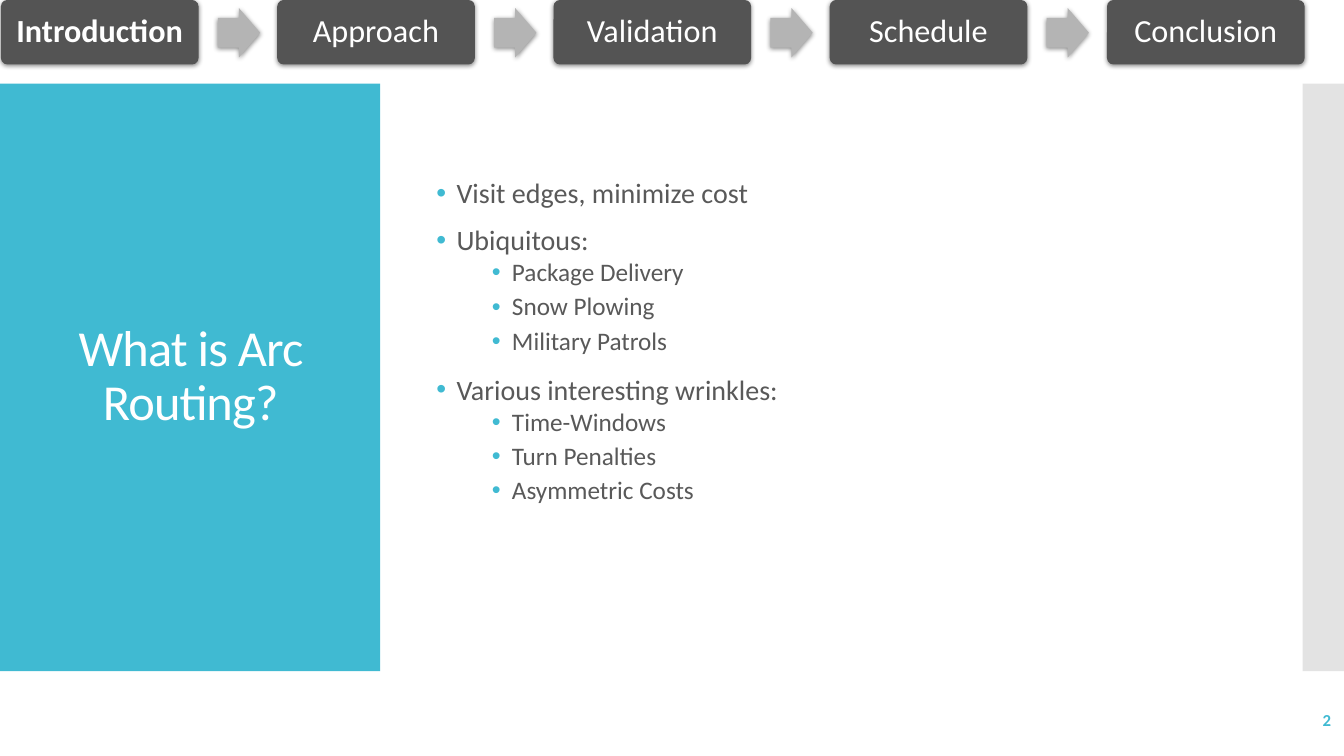
import pptx
import pptx.util
import pptx.dml.color
import pptx.enum.shapes
import pptx.enum.text
import pptx.oxml
import pptx.oxml.ns
import lxml.etree
from dataclasses import dataclass

PX = 9144
KIND = pptx.enum.shapes.MSO_SHAPE
ALIGN = pptx.enum.text.PP_ALIGN
qn = pptx.oxml.ns.qn


@dataclass(frozen=True)
class Theme:
    font: str = "Calibri"
    accent: str = "40BAD2"
    white: str = "FFFFFF"
    body: str = "595959"
    step: str = "545454"
    arrow: str = "B4B4B4"
    strip: str = "C8C8C8"
    shade: str = "000000"
    title: int = 36
    nav: int = 23
    main: int = 20
    sub: int = 18
    page: int = 12


def add(parent, tag, **attrs):
    node = lxml.etree.SubElement(parent, qn(tag))
    for key, value in attrs.items():
        node.set(key, str(value))
    return node


class Deck:
    def __init__(self, theme):
        self.theme = theme
        self.file = pptx.Presentation()
        self.file.slide_width = 1333 * PX
        self.file.slide_height = 750 * PX
        self.slide = self.file.slides.add_slide(self.file.slide_layouts[6])

    def shape(self, kind, box, color, alpha=100, adjust=(), shadow=False):
        item = self.slide.shapes.add_shape(kind, *[n * PX for n in box])
        item.shadow.inherit = False
        for i, value in enumerate(adjust):
            item.adjustments[i] = value
        item.fill.solid()
        item.fill.fore_color.rgb = pptx.dml.color.RGBColor.from_string(color)
        item.line.fill.background()
        props = item._element.spPr
        if alpha < 100:
            tone = props.find(qn("a:solidFill")).find(qn("a:srgbClr"))
            add(tone, "a:alpha", val=alpha * 1000)
        if shadow:
            cast = add(props.find(qn("a:effectLst")), "a:outerShdw",
                       blurRad=44450, dist=13970, dir=5400000,
                       algn="ctr", rotWithShape=0)
            tone = add(cast, "a:srgbClr", val=self.theme.shade)
            add(tone, "a:alpha", val=45000)
        return item

    def frame(self, item, pad=(10, 5)):
        frame = item.text_frame
        frame.word_wrap = True
        frame.vertical_anchor = pptx.enum.text.MSO_ANCHOR.MIDDLE
        frame.margin_left = frame.margin_right = pad[0] * PX
        frame.margin_top = frame.margin_bottom = pad[1] * PX
        return frame

    def box(self, box):
        return self.frame(self.slide.shapes.add_textbox(*[n * PX for n in box]))

    def label(self, para, text, size, color, align, bold=False, track=0):
        para.alignment = align
        para.line_spacing = 0.9
        run = para.add_run()
        run.text = text
        font = run.font
        font.name = self.theme.font
        font.size = pptx.util.Pt(size)
        font.bold = bold
        font.color.rgb = pptx.dml.color.RGBColor.from_string(color)
        if track:
            run._r.get_or_add_rPr().set("spc", str(track))

    def bullet(self, para, text, level):
        size = self.theme.sub if level else self.theme.main
        self.label(para, text, size, self.theme.body, ALIGN.LEFT)
        para.level = level
        para.space_before = pptx.util.Pt(2.5 if level else 12)
        para.space_after = pptx.util.Pt(2.5 if level else 0)
        props = para._p.get_or_add_pPr()
        props.set("marL", str((75 if level else 20) * PX))
        props.set("indent", str(-20 * PX))
        add(add(props, "a:buClr"), "a:srgbClr", val=self.theme.accent)
        add(props, "a:buFont", typeface="Arial")
        add(props, "a:buChar", char="•")

    def list(self, box, items):
        frame = self.box(box)
        for i, (level, text) in enumerate(items):
            para = frame.add_paragraph() if i else frame.paragraphs[0]
            self.bullet(para, text, level)

    def steps(self, names, active):
        look = self.theme
        for i, name in enumerate(names):
            left = 1 + i * 1097 // 4
            item = self.shape(KIND.ROUNDED_RECTANGLE, (left, 0, 196, 64),
                              look.step, adjust=(0.1,), shadow=True)
            para = self.frame(item, (12, 12)).paragraphs[0]
            self.label(para, name, look.nav, look.white, ALIGN.CENTER,
                       bold=name == active)
            if i < len(names) - 1:
                self.shape(KIND.RIGHT_ARROW, (left + 215, 8, 42, 49),
                           look.arrow, adjust=(0.6, 0.5), shadow=True)


def main():
    look = Theme()
    deck = Deck(look)
    deck.shape(KIND.RECTANGLE, (0, 83, 377, 583), look.accent)
    deck.shape(KIND.RECTANGLE, (1292, 83, 41, 583), look.strip, alpha=50)
    title = deck.box((28, 123, 322, 503)).paragraphs[0]
    deck.label(title, "What is Arc Routing?", look.title, look.white,
               ALIGN.CENTER, track=-60)
    deck.list((423, 94, 800, 491), [
        (0, "Visit edges, minimize cost"),
        (0, "Ubiquitous:"),
        (1, "Package Delivery"),
        (1, "Snow Plowing"),
        (1, "Military Patrols"),
        (0, "Various interesting wrinkles:"),
        (1, "Time-Windows"),
        (1, "Turn Penalties"),
        (1, "Asymmetric Costs"),
    ])
    deck.steps(["Introduction", "Approach", "Validation", "Schedule",
                "Conclusion"], "Introduction")
    page = deck.box((1163, 695, 167, 40)).paragraphs[0]
    deck.label(page, "2", look.page, look.accent, ALIGN.RIGHT, bold=True)
    deck.file.save("out.pptx")


if __name__ == "__main__":
    main()
